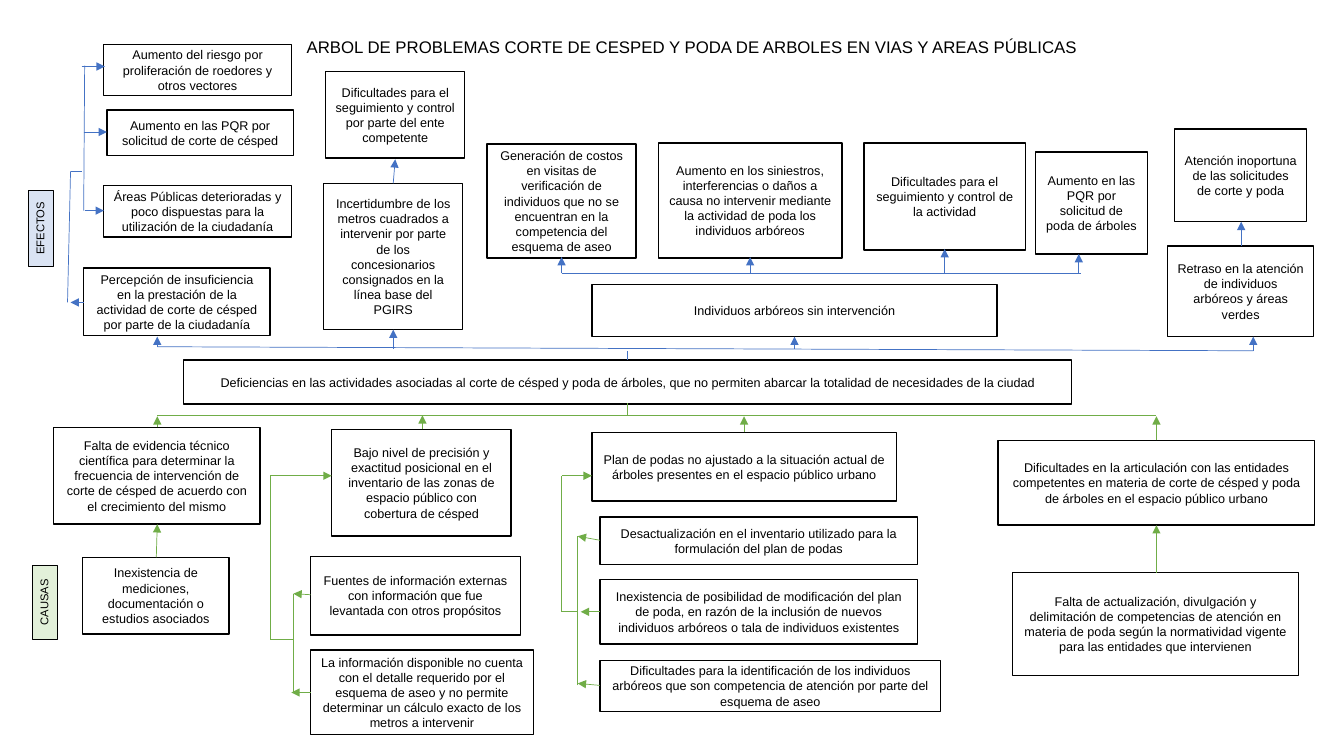
from pptx import Presentation, util as u
from pptx.dml.color import RGBColor
from pptx.enum import shapes, text
from pptx.oxml.ns import qn
from lxml import etree

BLACK, WHITE, BLUE, GREEN = "000000", "FFFFFF", "4472C4", "70AD47"
TITLE = "ARBOL DE PROBLEMAS CORTE DE CESPED Y PODA DE ARBOLES EN VIAS Y AREAS PÚBLICAS"

# Boxes: left, top, width, height in inches, then the wording
PROBLEM = [
    (1.82, 3.57, 8.81, 0.44, "Deficiencias en las actividades asociadas al corte de césped y poda de árboles, que no permiten abarcar la totalidad de necesidades de la ciudad"),
]
EFFECTS = [
    (0.83, 2.66, 1.85, 0.67, "Percepción de insuficiencia en la prestación de la actividad de corte de césped por parte de la ciudadanía"),
    (1.03, 0.44, 1.86, 0.51, "Aumento del riesgo por proliferación de roedores y otros vectores"),
    (1.06, 1.09, 1.85, 0.45, "Aumento en las PQR por solicitud de corte de césped"),
    (1.03, 1.84, 1.86, 0.51, "Áreas Públicas deterioradas y poco dispuestas para la utilización de la ciudadanía"),
    (3.21, 1.82, 1.38, 1.45, "Incertidumbre de los metros cuadrados a intervenir por parte de los concesionarios consignados en la línea base del PGIRS"),
    (3.23, 0.71, 1.38, 0.86, "Dificultades para el seguimiento y control por parte del ente competente"),
    (5.87, 2.82, 4.02, 0.52, "Individuos arbóreos sin intervención"),
    (4.83, 1.43, 1.48, 1.13, "Generación de costos en visitas de verificación de individuos que no se encuentran en la competencia del esquema de aseo"),
    (6.53, 1.42, 1.82, 1.14, "Aumento en los siniestros, interferencias o daños a causa no intervenir mediante la actividad de poda los individuos arbóreos"),
    (8.57, 1.42, 1.60, 1.06, "Dificultades para el seguimiento y control de la actividad"),
    (10.27, 1.51, 1.11, 1.01, "Aumento en las PQR por solicitud de poda de árboles"),
    (11.58, 2.44, 1.45, 0.90, "Retraso en la atención de individuos arbóreos y áreas verdes"),
    (11.65, 1.28, 1.31, 0.92, "Atención inoportuna de las solicitudes de corte y poda"),
]
CAUSES = [
    (0.53, 4.24, 2.05, 0.96, "Falta de evidencia técnico científica para determinar la frecuencia de intervención de corte de césped de acuerdo con el crecimiento del mismo"),
    (0.82, 5.53, 1.45, 0.76, "Inexistencia de mediciones, documentación o estudios asociados"),
    (3.29, 4.26, 1.78, 1.06, "Bajo nivel de precisión y exactitud posicional en el inventario de las zonas de espacio público con cobertura de césped"),
    (3.08, 5.52, 2.08, 0.78, "Fuentes de información externas con información que fue levantada con otros propósitos"),
    (3.08, 6.45, 2.21, 0.84, "La información disponible no cuenta con el detalle requerido por el esquema de aseo y no permite determinar un cálculo exacto de los metros a intervenir"),
    (5.87, 4.29, 3.02, 0.68, "Plan de podas no ajustado a la situación actual de árboles presentes en el espacio público urbano"),
    (5.95, 5.13, 3.15, 0.47, "Desactualización en el inventario utilizado para la formulación del plan de podas"),
    (5.95, 5.75, 3.15, 0.64, "Inexistencia de posibilidad de modificación del plan de poda, en razón de la inclusión de nuevos individuos arbóreos o tala de individuos existentes"),
    (5.95, 6.55, 3.38, 0.51, "Dificultades para la identificación de los individuos arbóreos que son competencia de atención por parte del esquema de aseo"),
    (9.90, 4.37, 3.14, 0.84, "Dificultades en la articulación con las entidades competentes en materia de corte de césped y poda de árboles en el espacio público urbano"),
    (10.04, 5.68, 2.84, 1.02, "Falta de actualización, divulgación y delimitación de competencias de atención en materia de poda según la normatividad vigente para las entidades que intervienen"),
]
SIDE_LABELS = [
    (0.03, 2.14, 0.75, 0.25, "EFECTOS", "DAE3F3"),
    (0.08, 5.85, 0.73, 0.25, "CAUSAS", "E2F0D9"),
]

# Routes are chains of points in inches; risers are x, start y, tip y
LINES = {
    BLUE: [
        [(1.56, 3.44), (12.43, 3.48)],
        [(6.22, 3.57), (6.22, 3.48)],
        [(0.67, 3), (0.7, 1.7), (0.81, 1.7)],
        [(0.84, 0.65), (0.83, 2.09)],
        [(5.57, 2.71), (10.72, 2.71)],
    ],
    GREEN: [
        [(1.56, 4.12), (11.47, 4.12)],
        [(6.22, 4), (6.22, 4.12)],
        [(2.91, 6.87), (2.91, 5.89)],
        [(2.91, 6.34), (2.68, 6.34), (2.68, 4.72)],
        [(5.73, 6.8), (5.73, 5.32)],
        [(5.73, 6.07), (5.57, 6.07), (5.57, 4.72)],
    ],
}
RISERS = {
    BLUE: [
        (1.56, 3.44, 3.34), (3.9, 3.46, 3.27), (7.88, 3.46, 3.34), (12.43, 3.48, 3.34),
        (5.57, 2.71, 2.55), (7.44, 2.71, 2.55), (9.37, 2.71, 2.47), (10.7, 2.71, 2.52),
        (12.31, 2.44, 2.2),
    ],
    GREEN: [
        (1.56, 4.24, 4.13), (4.19, 4.26, 4.12), (7.38, 4.29, 4.13), (11.47, 4.37, 4.13),
        (11.47, 5.68, 5.21),
    ],
}
ARROWS = {
    BLUE: [
        [(0.83, 3), (0.7, 3)],
        [(0.81, 0.66), (1.04, 0.66)],
        [(0.83, 1.31), (1.06, 1.31)],
        [(0.84, 2.09), (1.03, 2.09)],
        [(3.9, 1.82), (3.92, 1.58)],
    ],
    GREEN: [
        [(1.55, 5.53), (1.56, 5.2)],
        [(3.08, 6.87), (2.89, 6.87)],
        [(3.08, 5.9), (2.91, 5.89)],
        [(2.68, 4.72), (3.29, 4.72)],
        [(5.95, 6.8), (5.73, 6.78)],
        [(5.95, 6.07), (5.76, 6.07)],
        [(5.95, 5.36), (5.73, 5.32)],
        [(5.57, 4.72), (5.87, 4.72)],
    ],
}


def lengths(*inches):
    return [u.Cm(value * 2.54) for value in inches]


def color(hex_code):
    return RGBColor.from_string(hex_code)


def write(shape, words, size, anchor):
    frame = shape.text_frame
    frame.text = words
    frame.word_wrap = True
    frame.auto_size = text.MSO_AUTO_SIZE.NONE
    frame.vertical_anchor = anchor
    para = frame.paragraphs[0]
    para.alignment = text.PP_ALIGN.CENTER
    para.font.name = "Arial"
    para.font.size = u.Pt(size)
    para.font.color.rgb = color(BLACK)


def add_box(slide, place, words, size=9, fill=WHITE, border=1, anchor=text.MSO_ANCHOR.MIDDLE):
    box = slide.shapes.add_shape(shapes.MSO_SHAPE.RECTANGLE, *lengths(*place))
    box.shadow.inherit = False
    box.fill.solid()
    box.fill.fore_color.rgb = color(fill)
    box.line.color.rgb = color(BLACK)
    box.line.width = u.Pt(border)
    write(box, words, size, anchor)
    return box


def add_route(slide, points, line_color, arrow=False):
    """Join consecutive points with straight connectors."""
    for start, end in zip(points, points[1:]):
        line = slide.shapes.add_connector(shapes.MSO_CONNECTOR.STRAIGHT, *lengths(*start, *end))
        line.line.color.rgb = color(line_color)
        line.line.width = u.Pt(0.5)
        if arrow:
            etree.SubElement(line.line._get_or_add_ln(), qn("a:tailEnd"), type="triangle")
        etree.SubElement(line._element.spPr, qn("a:effectLst"))


def main():
    deck = Presentation()
    deck.slide_width, deck.slide_height = lengths(13.33, 7.5)
    slide = deck.slides.add_slide(deck.slide_layouts[5])

    title = slide.shapes.title
    title.left, title.top, title.width, title.height = lengths(2.18, 0.31, 9.37, 0.3)
    write(title, TITLE, 12, text.MSO_ANCHOR.MIDDLE)

    for *place, words in PROBLEM + EFFECTS + CAUSES:
        add_box(slide, place, words)
    for *place, words, fill in SIDE_LABELS:
        label = add_box(slide, place, words, 8, fill, 0.75, text.MSO_ANCHOR.TOP)
        label.rotation = 270

    for side in (BLUE, GREEN):
        for route in LINES[side]:
            add_route(slide, route, side)
        for x, start, tip in RISERS[side]:
            add_route(slide, [(x, start), (x, tip)], side, arrow=True)
        for route in ARROWS[side]:
            add_route(slide, route, side, arrow=True)

    deck.save("out.pptx")


if __name__ == "__main__":
    main()
